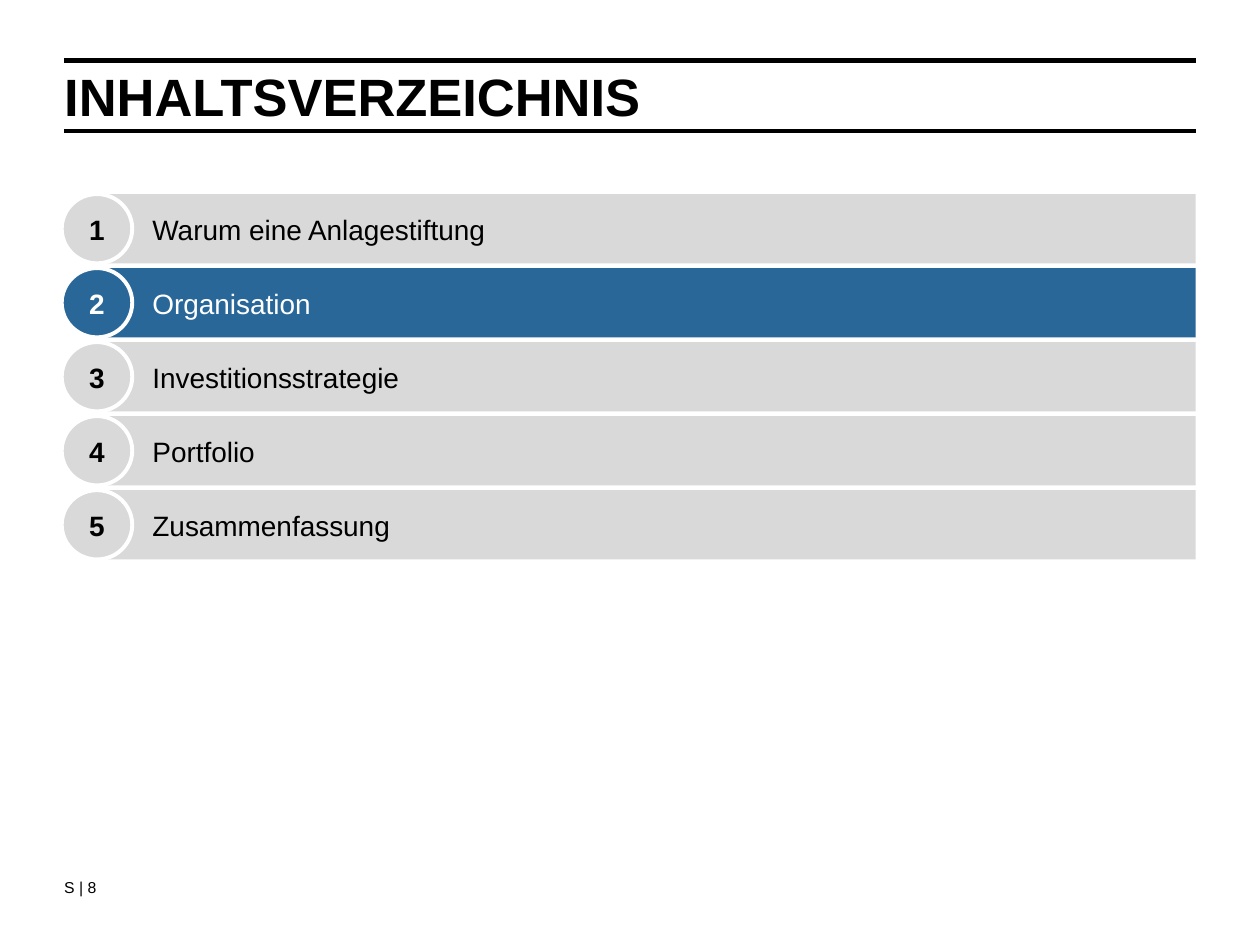
from lxml import etree
from pptx import Presentation
from pptx.dml.color import RGBColor
from pptx.enum.shapes import MSO_CONNECTOR, MSO_SHAPE
from pptx.enum.text import MSO_ANCHOR, PP_ALIGN
from pptx.oxml.ns import qn
from pptx.util import Inches, Pt

BLACK = RGBColor(0x00, 0x00, 0x00)
WHITE = RGBColor(0xFF, 0xFF, 0xFF)
GREY = RGBColor(0xD9, 0xD9, 0xD9)
BLUE = RGBColor(0x29, 0x67, 0x99)

STRAIGHT = MSO_CONNECTOR.STRAIGHT
RECTANGLE, OVAL = MSO_SHAPE.RECTANGLE, MSO_SHAPE.OVAL
TOP, MIDDLE = MSO_ANCHOR.TOP, MSO_ANCHOR.MIDDLE
LEFT, CENTER = PP_ALIGN.LEFT, PP_ALIGN.CENTER

CHAPTERS = ["Warum eine Anlagestiftung", "Organisation", "Investitionsstrategie",
            "Portfolio", "Zusammenfassung"]
CURRENT_CHAPTER = 2
FIRST_TOP, LAST_TOP = 1.54, 3.89
ROW_HEIGHT = 0.55


def write_text(shape, text, size=16, color=BLACK, bold=False, align=LEFT,
               anchor=MIDDLE, insets=(0.04, 0.04, 0.04, 0.04), spacing=1.06):
    """Fill a shape with one paragraph; insets run left, top, right, bottom."""
    frame = shape.text_frame
    frame.word_wrap = True
    frame.vertical_anchor = anchor
    (frame.margin_left, frame.margin_top,
     frame.margin_right, frame.margin_bottom) = map(Inches, insets)
    para = frame.paragraphs[0]
    para.alignment = align
    para.line_spacing = spacing
    span = para.add_run()
    span.text = text
    span.font.name = "Arial"
    span.font.size = Pt(size)
    span.font.bold = bold
    span.font.color.rgb = color


class Page:
    def __init__(self, deck):
        self.shapes = deck.slides.add_slide(deck.slide_layouts[6]).shapes

    def rule(self, top, left=0.51, right=9.49):
        line = self.shapes.add_connector(
            STRAIGHT, Inches(left), Inches(top), Inches(right), Inches(top))
        line.line.color.rgb = BLACK
        line.line.width = Pt(2.8)
        etree.SubElement(line._element.spPr, qn("a:effectLst"))

    def text(self, text, left, top, width, height, **style):
        box = self.shapes.add_textbox(*map(Inches, (left, top, width, height)))
        write_text(box, text, anchor=TOP, **style)

    def shape(self, kind, text, left, top, width, height, fill, outline=None, **style):
        shape = self.shapes.add_shape(kind, *map(Inches, (left, top, width, height)))
        shape.shadow.inherit = False
        shape.fill.solid()
        shape.fill.fore_color.rgb = fill
        if outline is None:
            shape.line.fill.background()
        else:
            shape.line.color.rgb = outline
            shape.line.width = Pt(2.25)
        write_text(shape, text, **style)

    def chapter(self, number, title, top, active):
        """Draw a title bar with its numbered circle on the left end."""
        fill, color = (BLUE, WHITE) if active else (GREY, BLACK)
        self.shape(RECTANGLE, title, 0.78, top, 8.71, ROW_HEIGHT, fill,
                   color=color, insets=(0.43, 0.04, 0.04, 0.04))
        self.shape(OVAL, str(number), 0.49, top, 0.56, ROW_HEIGHT, fill,
                   outline=WHITE, color=color, bold=True, align=CENTER)


def main():
    deck = Presentation()
    deck.slide_width, deck.slide_height = Inches(10), Inches(7.5)
    page = Page(deck)

    page.rule(0.48)
    page.rule(1.04)
    page.text("INHALTSVERZEICHNIS", 0.51, 0.56, 8.98, 0.39, size=30, bold=True,
              insets=(0, 0.03, 0, 0), spacing=Pt(30))
    page.text("S | 8", 0.51, 6.94, 0.75, 0.28, size=9, insets=(0, 0.02, 0, 0))

    pitch = (LAST_TOP - FIRST_TOP) / (len(CHAPTERS) - 1)
    for index, title in enumerate(CHAPTERS):
        number = index + 1
        page.chapter(number, title, FIRST_TOP + index * pitch,
                     active=number == CURRENT_CHAPTER)

    deck.save("out.pptx")


if __name__ == "__main__":
    main()
